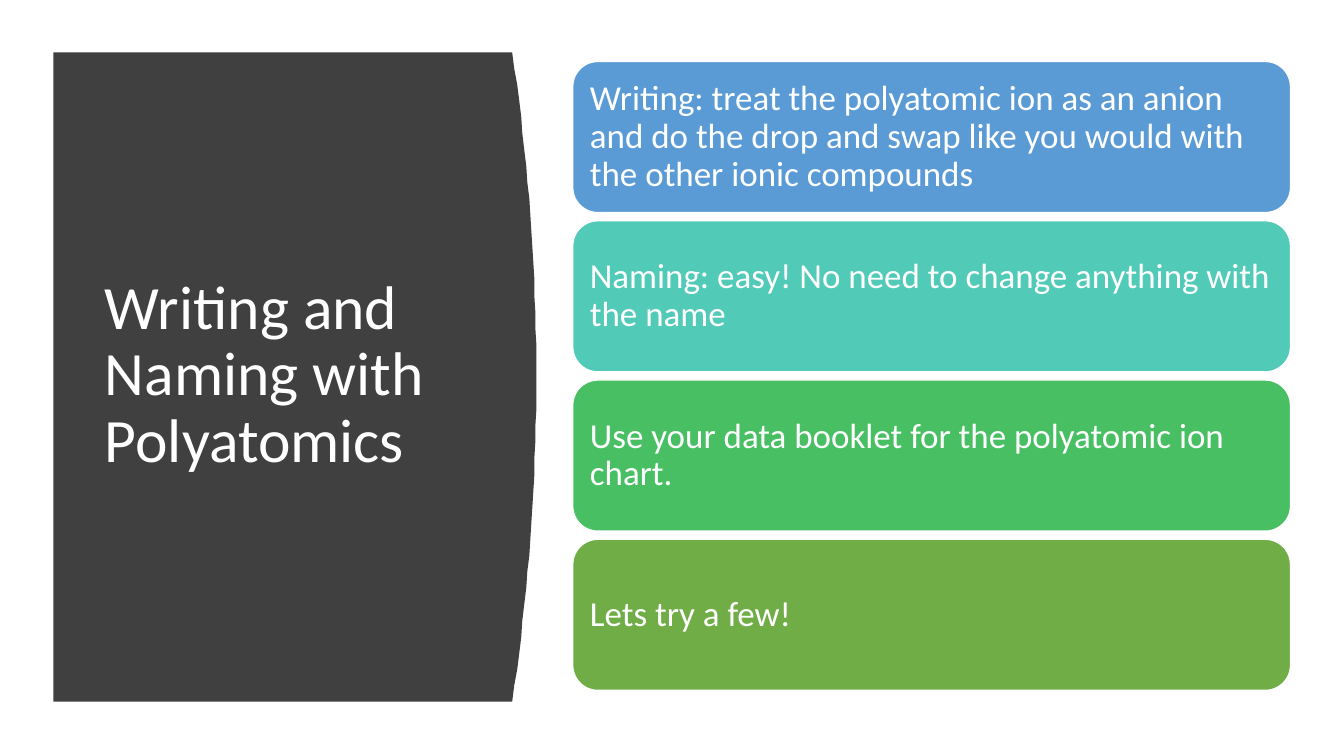
from dataclasses import dataclass

from pptx import Presentation
from pptx.dml.color import RGBColor
from pptx.enum.shapes import MSO_SHAPE
from pptx.enum.text import MSO_ANCHOR, MSO_AUTO_SIZE, PP_ALIGN
from pptx.shapes.autoshape import Shape
from pptx.slide import Slide
from pptx.text.text import TextFrame
from pptx.util import Pt

PX = 9144  # EMU per px, 100 px to the inch
COLORS = {
    "white": "FFFFFF",
    "charcoal": "404040",
    "blue": "5B9BD5",
    "teal": "52CAB8",
    "green": "49BF64",
    "olive": "70AD47",
}
FONT = "Calibri"

PANEL_LEFT, PANEL_TOP, PANEL_BOTTOM = 53, 52, 696
PANEL_RIGHT, PANEL_BULGE = 508, 24
CURVE_STEPS = 40

CARD_LEFT, CARD_TOP, CARD_WIDTH, CARD_HEIGHT = 568, 61, 712, 150
CARD_PITCH = 158
CARD_MARGIN = 10


@dataclass(frozen=True)
class Card:
    text: str
    color: str


CARDS = [
    Card("Writing: treat the polyatomic ion as an anion and do the drop and swap "
         "like you would with the other ionic compounds", "blue"),
    Card("Naming: easy! No need to change anything with the name", "teal"),
    Card("Use your data booklet for the polyatomic ion chart.", "green"),
    Card("Lets try a few!", "olive"),
]


def color(name: str) -> RGBColor:
    return RGBColor.from_string(COLORS[name])


def write_text(frame: TextFrame, text: str, size: int) -> None:
    frame.word_wrap = True
    frame.auto_size = MSO_AUTO_SIZE.NONE
    frame.vertical_anchor = MSO_ANCHOR.MIDDLE
    para = frame.paragraphs[0]
    para.text = text
    para.alignment = PP_ALIGN.LEFT
    para.line_spacing = 0.9
    para.font.name = FONT
    para.font.size = Pt(size)
    para.font.color.rgb = color("white")


def add_panel(page: Slide) -> Shape:
    """Draw the dark panel whose right edge bulges as a parabola."""
    half_height = (PANEL_BOTTOM - PANEL_TOP) / 2
    outline = page.shapes.build_freeform(PANEL_LEFT, PANEL_TOP, scale=PX)
    edge = []
    for step in range(CURVE_STEPS + 1):
        offset = 2 * step / CURVE_STEPS - 1
        edge.append((PANEL_RIGHT + PANEL_BULGE * (1 - offset ** 2),
                     PANEL_TOP + half_height * (1 + offset)))
    outline.add_line_segments(edge + [(PANEL_LEFT, PANEL_BOTTOM)], close=True)
    panel = outline.convert_to_shape()
    panel.shadow.inherit = False
    panel.fill.solid()
    panel.fill.fore_color.rgb = color("charcoal")
    panel.line.fill.background()
    return panel


def add_title(page: Slide, text: str) -> Shape:
    title = page.shapes.title
    title.left, title.top = 94 * PX, 111 * PX
    title.width, title.height = 374 * PX, 524 * PX
    write_text(title.text_frame, text, 44)
    return title


def add_card(page: Slide, card: Card, top: int) -> None:
    box = page.shapes.add_shape(
        MSO_SHAPE.ROUNDED_RECTANGLE,
        CARD_LEFT * PX, top * PX, CARD_WIDTH * PX, CARD_HEIGHT * PX)
    box.shadow.inherit = False
    box.fill.solid()
    box.fill.fore_color.rgb = color(card.color)
    box.line.color.rgb = color("white")
    box.line.width = Pt(1)
    frame = box.text_frame
    frame.margin_left = frame.margin_right = CARD_MARGIN * PX
    frame.margin_top = frame.margin_bottom = CARD_MARGIN * PX
    write_text(frame, card.text, 25)


def main() -> None:
    deck = Presentation()
    deck.slide_width, deck.slide_height = 1333 * PX, 750 * PX
    page = deck.slides.add_slide(deck.slide_layouts.get_by_name("Title Only"))
    panel = add_panel(page)
    title = add_title(page, "Writing and Naming with Polyatomics")
    title.element.addprevious(panel.element)  # panel goes behind the title
    for row, card in enumerate(CARDS):
        add_card(page, card, CARD_TOP + row * CARD_PITCH)
    deck.save("out.pptx")


if __name__ == "__main__":
    main()
